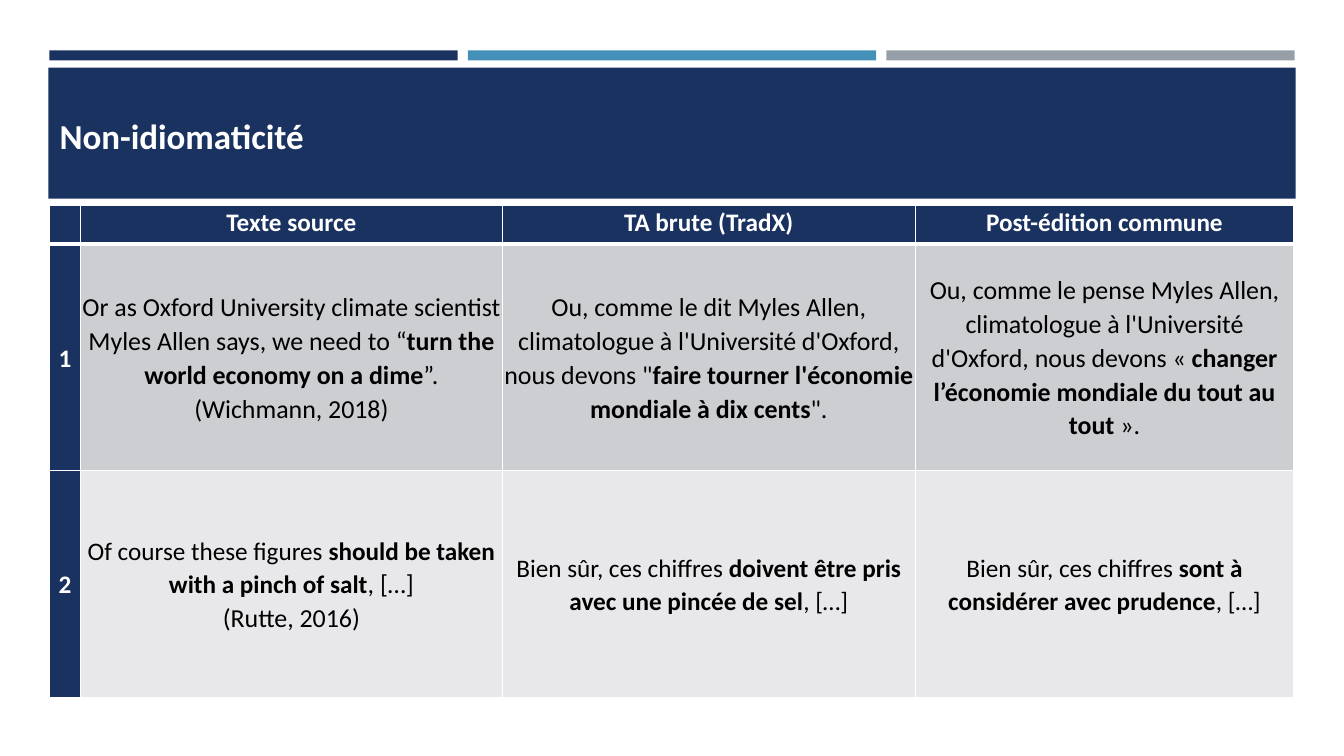
from lxml import etree
from pptx import Presentation
from pptx.dml.color import RGBColor
from pptx.enum.shapes import MSO_SHAPE
from pptx.enum.text import MSO_ANCHOR, MSO_AUTO_SIZE, PP_ALIGN
from pptx.oxml.ns import qn
from pptx.util import Inches, Pt

NAVY, BLUE, GRAY = "1A3260", "4590B8", "969FA7"
WHITE, BLACK = "FFFFFF", "000000"
ROW_FILLS = [NAVY, "CDCED2", "E8E8EA"]
COLUMN_WIDTHS = [0.31, 4.18, 4.1, 3.75]
ROW_HEIGHTS = [0.38, 2.25, 2.25]
HEADERS = ["", "Texte source", "TA brute (TradX)", "Post-édition commune"]

# Each cell is a list of paragraphs; each paragraph a list of (text, bold, size).
EXAMPLES = [
    [
        [[("Or as Oxford University climate scientist Myles Allen says, we need to “", False, 18.5),
          ("turn the world economy on a dime", True, 18.5), ("”.", False, 18.5)],
         [("(Wichmann, 2018)", False, 18.5)]],
        [[("Ou, comme le dit Myles Allen, climatologue à l'Université d'Oxford, nous devons \"", False, 18.5),
          ("faire tourner l'économie mondiale à dix cents", True, 18.5), ("\".", False, 18.5)]],
        [[("Ou, comme le pense Myles Allen, climatologue à l'Université d'Oxford, nous devons « ", False, 18.5),
          ("changer l’économie mondiale du tout au tout", True, 18.5), (" ».", False, 18.5)]],
    ],
    [
        [[("Of course these figures ", False, 18),
          ("should be taken with a pinch of salt", True, 18), (", […]", False, 18.5)],
         [("(Rutte, 2016)", False, 18.5)]],
        [[("Bien sûr, ces chiffres ", False, 18),
          ("doivent être pris avec une pincée de sel", True, 18), (", […]", False, 18)]],
        [[("Bien sûr, ces chiffres ", False, 18),
          ("sont à considérer avec prudence", True, 18), (", […]", False, 18)]],
    ],
]


def rgb(color):
    return RGBColor.from_string(color)


def add_run(paragraph, text, size=18, color=BLACK, bold=False):
    run = paragraph.add_run()
    run.text = text
    font = run.font
    font.name, font.size, font.bold = "Calibri", Pt(size), bold
    font.color.rgb = rgb(color)


def add_bar(slide, left, top, width, height, color):
    shape = slide.shapes.add_shape(
        MSO_SHAPE.RECTANGLE, Inches(left), Inches(top), Inches(width), Inches(height))
    shape.shadow.inherit = False
    shape.fill.solid()
    shape.fill.fore_color.rgb = rgb(color)
    shape.line.fill.background()


def set_title(slide, text):
    title = slide.shapes.title
    title.left, title.top = Inches(0.49), Inches(0.77)
    title.width, title.height = Inches(12.06), Inches(1.27)
    frame = title.text_frame
    frame.auto_size = MSO_AUTO_SIZE.NONE
    frame.vertical_anchor = MSO_ANCHOR.BOTTOM
    frame.margin_bottom = Inches(0.49)
    paragraph = frame.paragraphs[0]
    paragraph.alignment = PP_ALIGN.LEFT
    add_run(paragraph, text, size=25, color=WHITE, bold=True)
    # Bring the title in front of the banner.
    slide.shapes._spTree.append(title._element)


def set_borders(cell, top=1, bottom=1):
    properties = cell._tc.get_or_add_tcPr()
    for side, width in (("L", 1), ("R", 1), ("T", top), ("B", bottom)):
        line = etree.SubElement(properties, qn(f"a:ln{side}"), w=str(Pt(width)))
        fill = etree.SubElement(line, qn("a:solidFill"))
        etree.SubElement(fill, qn("a:srgbClr"), val=WHITE)


def fill_cell(cell, paragraphs, fill, color=BLACK, anchor=MSO_ANCHOR.MIDDLE):
    cell.margin_left = cell.margin_right = Inches(0.01)
    cell.margin_top = cell.margin_bottom = 0
    cell.vertical_anchor = anchor
    cell.fill.solid()
    cell.fill.fore_color.rgb = rgb(fill)
    for index, runs in enumerate(paragraphs):
        frame = cell.text_frame
        paragraph = frame.add_paragraph() if index else frame.paragraphs[0]
        paragraph.alignment = PP_ALIGN.CENTER
        paragraph.line_spacing = 1.07
        for text, bold, size in runs:
            add_run(paragraph, text, size=size, color=color, bold=bold)


def add_examples_table(slide):
    table = slide.shapes.add_table(
        len(ROW_HEIGHTS), len(COLUMN_WIDTHS), Inches(0.49), Inches(2.04),
        Inches(sum(COLUMN_WIDTHS)), Inches(sum(ROW_HEIGHTS))).table
    for column, width in zip(table.columns, COLUMN_WIDTHS):
        column.width = Inches(width)
    for row_index, height in enumerate(ROW_HEIGHTS):
        table.rows[row_index].height = Inches(height)
        for cell in table.rows[row_index].cells:
            set_borders(cell, top=3 if row_index == 1 else 1,
                        bottom=3 if row_index == 0 else 1)

    for column_index, header in enumerate(HEADERS):
        paragraphs = [[(header, True, 18)]] if header else []
        fill_cell(table.cell(0, column_index), paragraphs, NAVY, WHITE, MSO_ANCHOR.TOP)
    for number, example in enumerate(EXAMPLES, start=1):
        fill_cell(table.cell(number, 0), [[(str(number), True, 18)]], NAVY, WHITE)
        for column_index, paragraphs in enumerate(example, start=1):
            fill_cell(table.cell(number, column_index), paragraphs, ROW_FILLS[number])


def main():
    presentation = Presentation()
    presentation.slide_width, presentation.slide_height = Inches(13.33), Inches(7.5)
    slide = presentation.slides.add_slide(presentation.slide_layouts[5])
    for index, color in enumerate([NAVY, BLUE, GRAY]):
        add_bar(slide, 0.49 + index * 4.15, 0.5, 4.05, 0.1, color)
    add_bar(slide, 0.48, 0.67, 12.37, 1.3, NAVY)
    set_title(slide, "Non-idiomaticité")
    add_examples_table(slide)
    presentation.save("out.pptx")


if __name__ == "__main__":
    main()
